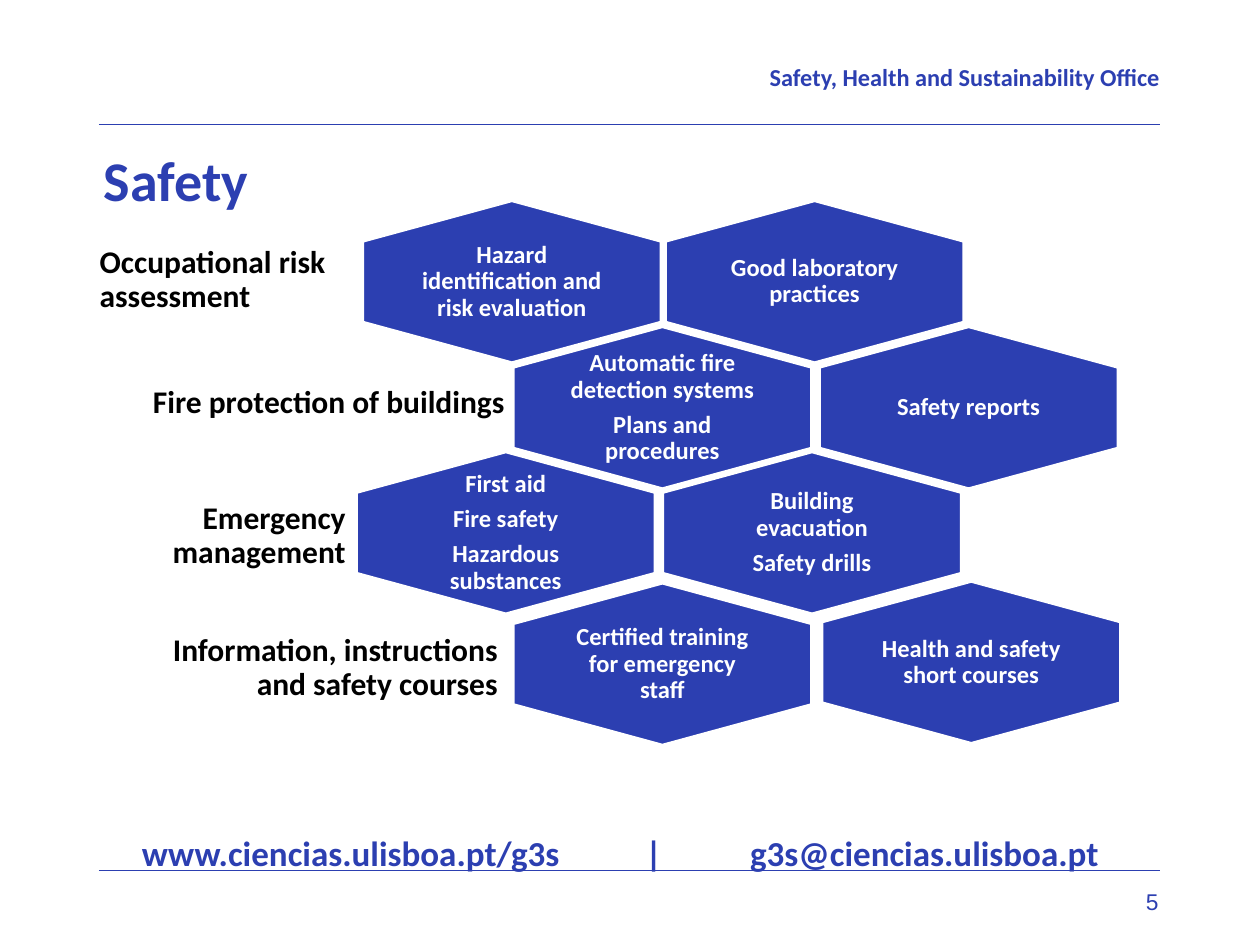
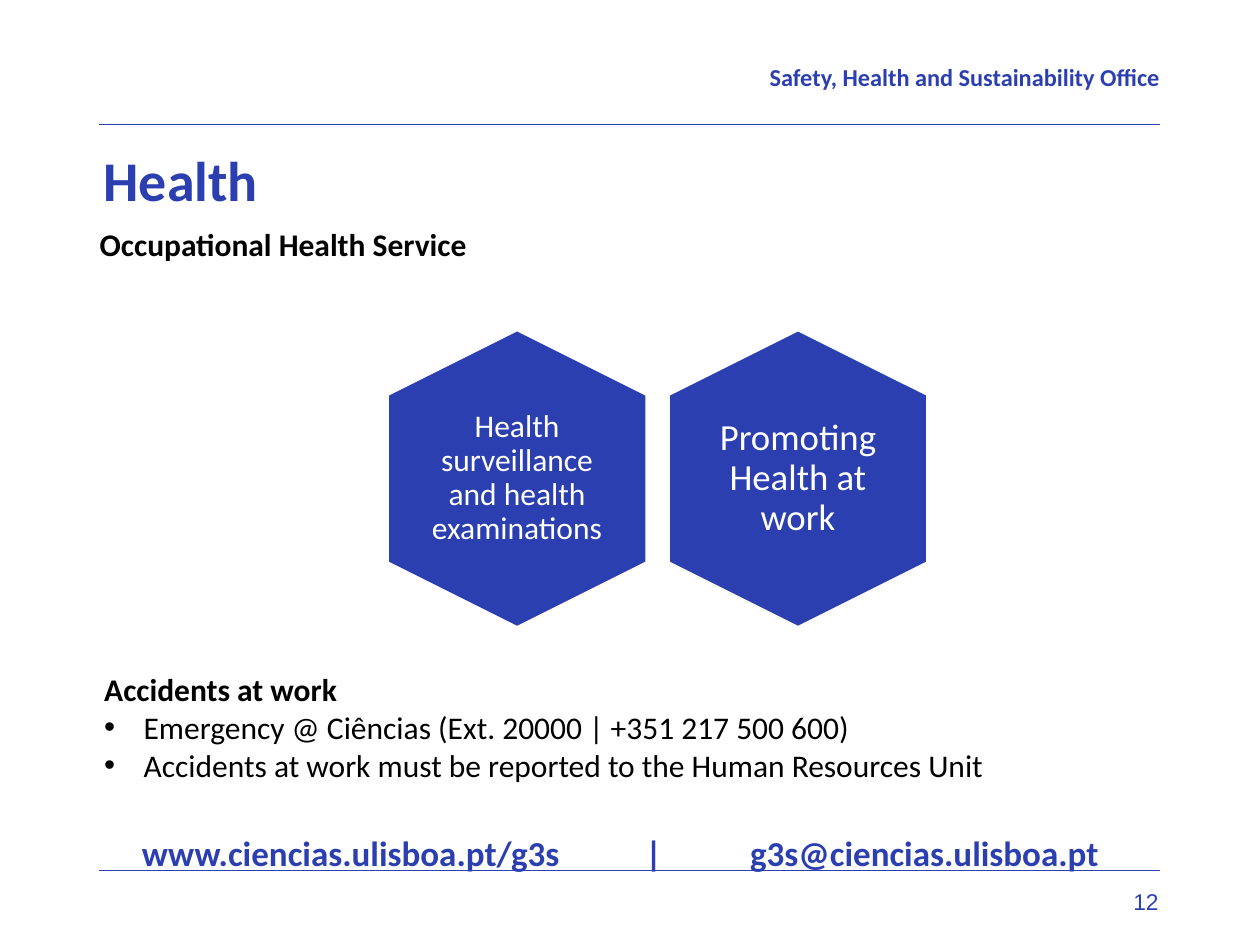
from typing import NamedTuple

from lxml import etree
from pptx import Presentation
from pptx.dml.color import RGBColor
from pptx.enum import shapes, text
from pptx.oxml import ns
from pptx.util import Pt

COLORS = {"blue": "2C3FB1", "white": "FFFFFF", "black": "000000"}
ALIGN = text.PP_ALIGN
ANCHOR = text.MSO_ANCHOR


class Box(NamedTuple):
    left: float
    top: float
    width: float
    height: float


class Style(NamedTuple):
    size: float
    color: str = "black"
    bold: bool = True
    align: text.PP_ALIGN = ALIGN.LEFT
    line_spacing: float = 1.0
    space_after: float = 0
    font: str = "Calibri"


class HexagonSize(NamedTuple):
    width: float
    height: float
    text_width: float
    text_height: float
    inset: float


class Hexagon(NamedTuple):
    center_x: float
    center_y: float
    lines: list[str]


class Label(NamedTuple):
    box: Box
    wording: str
    align: text.PP_ALIGN = ALIGN.RIGHT


# Text styles
TITLE = Style(32, "blue", line_spacing=1.5, space_after=18)
HEADER = Style(24, "blue", align=ALIGN.RIGHT)
CONTACT = Style(20, "blue", line_spacing=1.5, space_after=6)
NUMBER = Style(13, "blue", bold=False, align=ALIGN.RIGHT, font="Arial")
LABEL = Style(18, line_spacing=0.9)
TOPIC = Style(14, "white", align=ALIGN.CENTER, line_spacing=0.9, space_after=5)
SERVICE = TOPIC._replace(size=18, bold=False)
HEADING = Style(18)
BULLET = Style(18, bold=False)

# Shared positions
TITLE_BOX = Box(52, 60.5, 232, 60)
HEADER_BOX = Box(160, 29, 503, 36)
CONTACT_BOX = Box(74, 459.5, 583, 39.5)
NUMBER_BOX = Box(494, 503.5, 168, 29)
RULE_LEFT, RULE_RIGHT = 56.5, 663
RULE_TOPS = (71, 497.5)
CONTACT_TABS = ((292.5, "ctr"), (347.5, "l"))

# Safety slide
SAFETY_SIZE = HexagonSize(171, 93, 114.5, 62, 4)
SAFETY_HEXAGONS = [
    Hexagon(292.5, 161, ["Hazard identification and risk evaluation"]),
    Hexagon(465.5, 161, ["Good laboratory practices"]),
    Hexagon(378.5, 233, ["Automatic fire detection systems", "Plans and procedures"]),
    Hexagon(553.5, 233, ["Safety reports"]),
    Hexagon(289, 304.5, ["First aid", "Fire safety", "Hazardous substances"]),
    Hexagon(464, 304.5, ["Building evacuation", "Safety drills"]),
    Hexagon(378.5, 379.5, ["Certified training for emergency staff"]),
    Hexagon(555, 378.5, ["Health and safety short courses"]),
]
SAFETY_LABELS = [
    Label(Box(52, 132.5, 196.5, 55.5), "Occupational risk assessment", ALIGN.LEFT),
    Label(Box(74, 203, 219.5, 55.5), "Fire protection of buildings"),
    Label(Box(81.5, 278.5, 121, 55.5), "Emergency management"),
    Label(Box(68.5, 354, 221, 55.5), "Information, instructions and safety courses"),
]

# Health slide
HEALTH_SIZE = HexagonSize(148.5, 170.5, 102, 117, 0)
HEALTH_HEXAGONS = [
    (Hexagon(295.5, 273.5, ["Health surveillance and health examinations"]), SERVICE),
    (Hexagon(456, 273.5, ["Promoting Health at work"]), SERVICE._replace(size=21)),
]
HEALTH_LABEL = Label(Box(52, 110, 595, 61), "Occupational Health Service", ALIGN.LEFT)
ACCIDENTS_BOX = Box(52.5, 379.5, 623.5, 94)
ACCIDENT_RULES = [
    "Emergency @ Ciências (Ext. 20000 | +351 217 500 600)",
    "Accidents at work must be reported to the Human Resources Unit",
]


def rgb(name: str) -> RGBColor:
    return RGBColor.from_string(COLORS[name])


def place(shape, box: Box) -> None:
    shape.left, shape.top, shape.width, shape.height = map(Pt, box)


def format_paragraph(paragraph, style: Style) -> None:
    paragraph.alignment = style.align
    paragraph.line_spacing = style.line_spacing
    paragraph.space_after = Pt(style.space_after)
    font = paragraph.font
    font.name, font.size, font.bold = style.font, Pt(style.size), style.bold
    font.color.rgb = rgb(style.color)


def add_text(slide, box: Box, lines: list[str], style: Style,
             inset_x: float = 7.2, inset_y: float = 3.6, anchor=ANCHOR.TOP):
    shape = slide.shapes.add_textbox(*map(Pt, box))
    frame = shape.text_frame
    frame.word_wrap = True
    frame.vertical_anchor = anchor
    frame.margin_left = frame.margin_right = Pt(inset_x)
    frame.margin_top = frame.margin_bottom = Pt(inset_y)
    frame.text = "\n".join(lines)
    for paragraph in frame.paragraphs:
        format_paragraph(paragraph, style)
    return frame


def add_tabs(paragraph, tabs) -> None:
    properties = paragraph._p.get_or_add_pPr()
    tab_list = etree.SubElement(properties, ns.qn("a:tabLst"))
    for position, align in tabs:
        etree.SubElement(tab_list, ns.qn("a:tab"), pos=str(Pt(position)), algn=align)


def add_bullet(paragraph, indent: float) -> None:
    properties = paragraph._p.get_or_add_pPr()
    properties.set("marL", str(Pt(indent)))
    properties.set("indent", str(-Pt(indent)))
    etree.SubElement(properties, ns.qn("a:buFont"), typeface="Arial")
    etree.SubElement(properties, ns.qn("a:buChar"), char="•")


def add_rule(slide, top: float) -> None:
    rule = slide.shapes.add_connector(
        shapes.MSO_CONNECTOR.STRAIGHT, Pt(RULE_LEFT), Pt(top), Pt(RULE_RIGHT), Pt(top))
    rule.line.color.rgb = rgb("blue")
    rule.line.width = Pt(0.5)
    etree.SubElement(rule._element.spPr, ns.qn("a:effectLst"))


def add_hexagon(slide, hexagon: Hexagon, size: HexagonSize, style: Style) -> None:
    # A quarter turn swaps width and height and puts the points at top and bottom
    shape = slide.shapes.add_shape(
        shapes.MSO_SHAPE.HEXAGON,
        Pt(hexagon.center_x - size.height / 2), Pt(hexagon.center_y - size.width / 2),
        Pt(size.height), Pt(size.width))
    place(shape, Box(hexagon.center_x - size.height / 2,
                     hexagon.center_y - size.width / 2, size.height, size.width))
    shape.rotation = 90
    shape.shadow.inherit = False
    shape.fill.solid()
    shape.fill.fore_color.rgb = rgb("blue")
    shape.line.color.rgb = rgb("white")
    shape.line.width = Pt(2)
    box = Box(hexagon.center_x - size.text_width / 2,
              hexagon.center_y - size.text_height / 2, size.text_width, size.text_height)
    add_text(slide, box, hexagon.lines, style, size.inset, size.inset, ANCHOR.MIDDLE)


def add_label(slide, label: Label) -> None:
    add_text(slide, label.box, [label.wording], LABEL._replace(align=label.align),
             5, 5, ANCHOR.MIDDLE)


def add_base_slide(presentation, title: str, number: int):
    slide = presentation.slides.add_slide(presentation.slide_layouts[5])
    # Header and rules
    for top in RULE_TOPS:
        add_rule(slide, top)
    header = add_text(slide, HEADER_BOX, ["Safety, Health and Sustainability Office"],
                      HEADER, inset_x=0)
    header.paragraphs[0].runs[0]._r.get_or_add_rPr().set("baseline", "30000")
    # Footer
    add_text(slide, NUMBER_BOX, [str(number)], NUMBER, inset_x=0)
    contact = add_text(slide, CONTACT_BOX, [], CONTACT).paragraphs[0]
    contact.clear()
    contact._p.remove(contact._p.pPr)
    contact.text = "www.ciencias.ulisboa.pt/g3s\t|\tg3s@ciencias.ulisboa.pt"
    add_tabs(contact, CONTACT_TABS)
    format_paragraph(contact, CONTACT)
    # Title
    place(slide.shapes.title, TITLE_BOX)
    frame = slide.shapes.title.text_frame
    frame.text = title
    frame.auto_size = text.MSO_AUTO_SIZE.NONE
    frame.vertical_anchor = ANCHOR.TOP
    format_paragraph(frame.paragraphs[0], TITLE)
    return slide


def add_safety_slide(presentation) -> None:
    slide = add_base_slide(presentation, "Safety", 5)
    for hexagon in SAFETY_HEXAGONS:
        add_hexagon(slide, hexagon, SAFETY_SIZE, TOPIC)
    for label in SAFETY_LABELS:
        add_label(slide, label)


def add_health_slide(presentation) -> None:
    slide = add_base_slide(presentation, "Health", 12)
    add_label(slide, HEALTH_LABEL)
    for hexagon, style in HEALTH_HEXAGONS:
        add_hexagon(slide, hexagon, HEALTH_SIZE, style)
    # Accidents
    frame = add_text(slide, ACCIDENTS_BOX, ["Accidents at work"], HEADING)
    for rule in ACCIDENT_RULES:
        paragraph = frame.add_paragraph()
        paragraph.text = rule
        add_bullet(paragraph, 22.5)
        format_paragraph(paragraph, BULLET)


def main() -> None:
    presentation = Presentation()
    presentation.slide_width, presentation.slide_height = Pt(720), Pt(540)
    add_safety_slide(presentation)
    add_health_slide(presentation)
    presentation.save("out.pptx")


if __name__ == "__main__":
    main()
